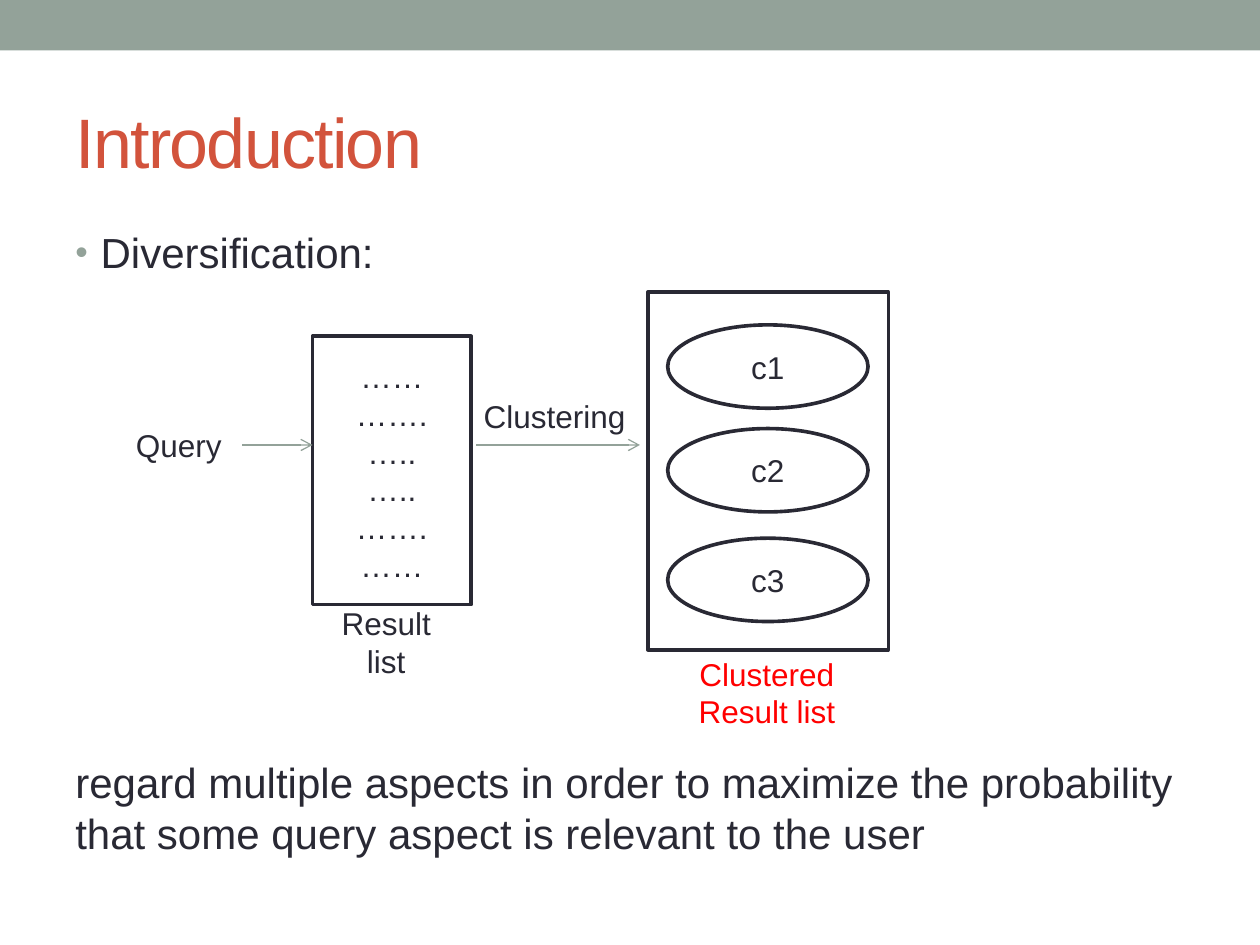
from dataclasses import dataclass
from typing import Optional

from lxml.etree import SubElement
from pptx import Presentation
from pptx.dml.color import RGBColor
from pptx.enum.shapes import MSO_CONNECTOR, MSO_SHAPE
from pptx.enum.text import MSO_ANCHOR, PP_ALIGN
from pptx.oxml.ns import qn
from pptx.util import Cm, Pt

INK = RGBColor(0x29, 0x29, 0x34)
SAGE = RGBColor(0x93, 0xA2, 0x99)
BRICK = RGBColor(0xD2, 0x53, 0x3C)
RED = RGBColor(0xFF, 0x00, 0x00)
WHITE = RGBColor(0xFF, 0xFF, 0xFF)
FONT = "Arial"
ARROW_HEIGHT = 8.97


@dataclass(frozen=True)
class Box:
    left: float
    top: float
    width: float
    height: float
    text: str = ""
    kind: MSO_SHAPE = MSO_SHAPE.RECTANGLE
    fill: Optional[RGBColor] = WHITE
    line: Optional[RGBColor] = INK
    color: RGBColor = INK

    def lengths(self) -> tuple:
        return Cm(self.left), Cm(self.top), Cm(self.width), Cm(self.height)


def write_text(shape, text: str, *, size: float = 18, color: RGBColor = INK,
               align=PP_ALIGN.LEFT, anchor=MSO_ANCHOR.TOP, tracking: float = 0) -> None:
    frame = shape.text_frame
    frame.word_wrap = True
    frame.vertical_anchor = anchor
    frame.text = text
    for para in frame.paragraphs:
        para.alignment = align
        for span in para.runs:
            span.font.name = FONT
            span.font.size = Pt(size)
            span.font.color.rgb = color
            if tracking:
                span.font._element.set("spc", str(round(tracking * 100)))


def add_box(page, box: Box):
    shape = page.shapes.add_shape(box.kind, *box.lengths())
    shape.shadow.inherit = False
    if box.fill is None:
        shape.fill.background()
    else:
        shape.fill.solid()
        shape.fill.fore_color.rgb = box.fill
    if box.line is None:
        shape.line.fill.background()
    else:
        shape.line.color.rgb = box.line
        shape.line.width = Pt(2.08)
    if box.text:
        write_text(shape, box.text, color=box.color,
                   align=PP_ALIGN.CENTER, anchor=MSO_ANCHOR.MIDDLE)
    return shape


def add_label(page, box: Box, size: float = 18):
    label = page.shapes.add_textbox(*box.lengths())
    write_text(label, box.text, size=size, color=box.color)
    return label


def add_arrow(page, start: float, end: float):
    arrow = page.shapes.add_connector(MSO_CONNECTOR.STRAIGHT, Cm(start), Cm(ARROW_HEIGHT),
                                      Cm(end), Cm(ARROW_HEIGHT))
    arrow.line.color.rgb = SAGE
    arrow.line.width = Pt(0.75)
    SubElement(arrow.line._get_or_add_ln(), qn("a:tailEnd"), type="arrow")
    SubElement(arrow._element.spPr, qn("a:effectLst"))
    return arrow


def add_bullet(para) -> None:
    properties = para._p.get_or_add_pPr()
    properties.set("marL", str(Cm(0.51)))
    properties.set("indent", str(-Cm(0.51)))
    color = SubElement(properties, qn("a:buClr"))
    SubElement(color, qn("a:srgbClr"), val=str(SAGE))
    SubElement(properties, qn("a:buSzPct"), val="85000")
    SubElement(properties, qn("a:buFont"), typeface=FONT)
    SubElement(properties, qn("a:buChar"), char="•")


def add_title(page, box: Box) -> None:
    title = page.shapes.title
    title.left, title.top, title.width, title.height = box.lengths()
    write_text(title, box.text, size=40, color=box.color,
               anchor=MSO_ANCHOR.MIDDLE, tracking=-1)


def add_body(page, box: Box) -> None:
    heading, conclusion = add_label(page, box, size=24).text_frame.paragraphs
    add_bullet(heading)
    conclusion.space_before = Pt(274)


def main() -> None:
    deck = Presentation()
    deck.slide_width, deck.slide_height = Cm(25.4), Cm(19.05)
    page = deck.slides.add_slide(deck.slide_layouts[5])

    add_box(page, Box(0, 0, 25.4, 1.02, fill=SAGE, line=None))
    add_title(page, Box(1.27, 1.47, 22.86, 2.74, "Introduction", color=BRICK))
    add_body(page, Box(1.27, 4.45, 22.86, 13.54,
                       "Diversification:\nregard multiple aspects in order to maximize the "
                       "probability that some query aspect is relevant to the user"))

    query = add_label(page, Box(2.49, 8.46, 2.39, 1.02, "Query"))
    add_box(page, Box(6.3, 6.78, 3.2, 5.41, "……\n…….\n…..\n…..\n…….\n……"))
    add_arrow(page, 4.88, 6.3).begin_connect(query, 3)
    add_box(page, Box(13.06, 5.89, 4.85, 7.21))
    add_box(page, Box(6.3, 12.37, 2.97, 1.14, "Result list", line=None))
    for number, top in enumerate((6.55, 8.64, 10.85), start=1):
        add_box(page, Box(13.46, top, 4.04, 1.68, f"c{number}", MSO_SHAPE.OVAL, fill=None))
    add_arrow(page, 9.6, 12.9)
    add_label(page, Box(9.5, 7.87, 3.94, 1.02, "Clustering"))
    add_box(page, Box(13.44, 13.39, 4.04, 1.14, "Clustered Result list", line=None, color=RED))

    deck.save("out.pptx")


if __name__ == "__main__":
    main()
